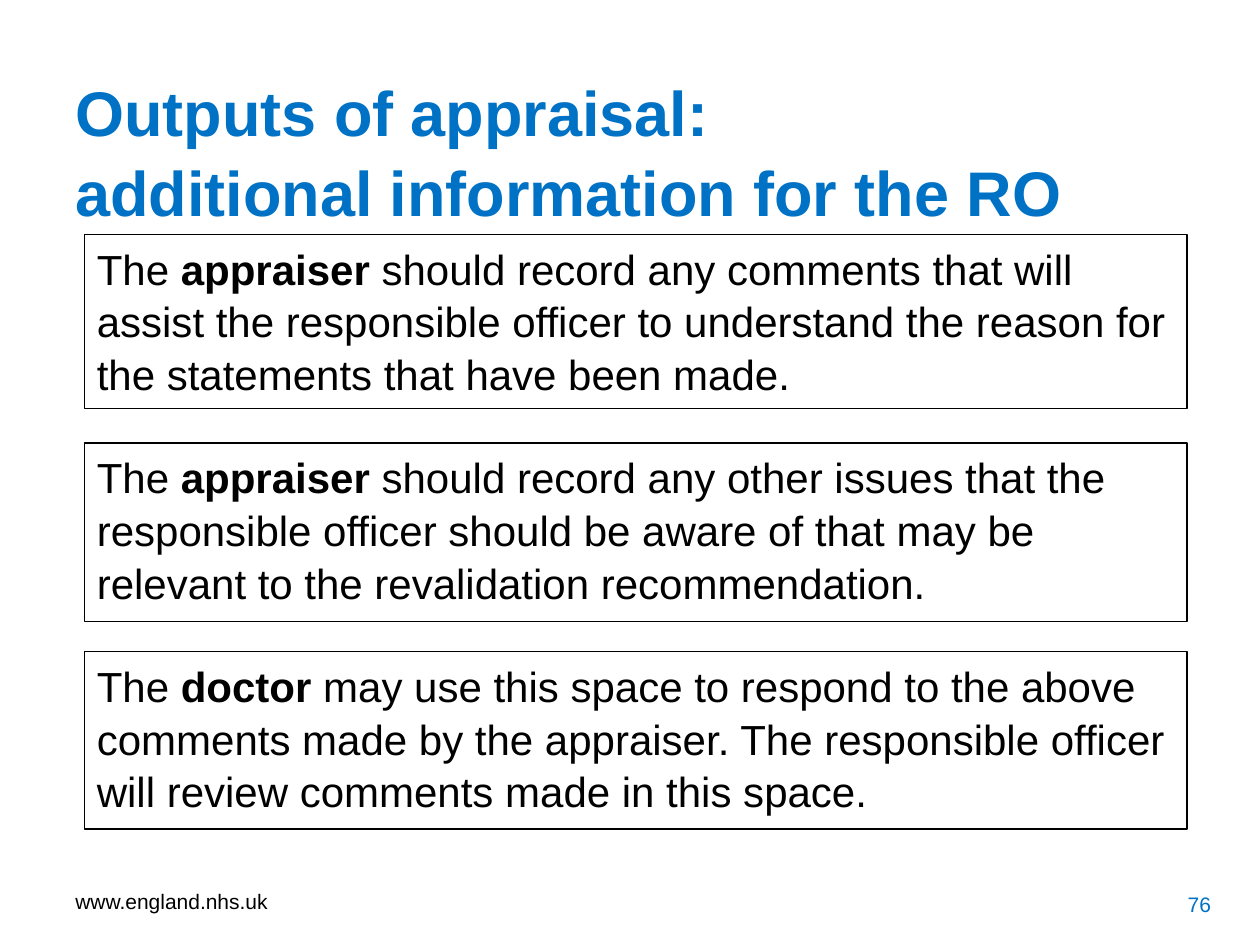
import pptx
import pptx.util
import pptx.dml.color
import pptx.enum.shapes
import pptx.enum.text

Inches, Pt = pptx.util.Inches, pptx.util.Pt
RGB = pptx.dml.color.RGBColor.from_string
ALIGN = pptx.enum.text.PP_ALIGN
ANCHOR = pptx.enum.text.MSO_ANCHOR


class Theme:
    font = "Arial"
    blue = RGB("0072C6")
    black = RGB("000000")
    head, body, small = Pt(36), Pt(24), Pt(12)
    lead = 1.05
    rule = Pt(0.75)


# Grid of stacked boxes, in inches
LEFT, WIDE = 0.67, 8.75
TOP, STEP = 1.86, 1.655
BOXES = [
    (1.38, [[("The ", False), ("appraiser", True),
             (" should record any comments that will assist the responsible "
              "officer to understand the reason for the statements that have "
              "been made.", False)]]),
    (1.42, [[("The ", False), ("appraiser", True),
             (" should record any other issues that the responsible officer "
              "should be aware of that may be relevant to the revalidation "
              "recommendation.", False)]]),
    (1.41, [[("The ", False), ("doctor", True),
             (" may use this space to respond to the above comments made by "
              "the appraiser. The responsible officer", False)],
            [("will review comments made in this space.", False)]]),
]


def apply(item, look):
    for key, value in look.items():
        setattr(item, key, value)


def write(shape, paras, size, color, anchor, align=ALIGN.LEFT):
    """Fill a shape with paragraphs of (text, bold) runs."""
    frame = shape.text_frame
    apply(frame, {"word_wrap": True, "vertical_anchor": anchor})
    for i, runs in enumerate(paras):
        para = frame.paragraphs[0] if i == 0 else frame.add_paragraph()
        apply(para, {"alignment": align, "line_spacing": Theme.lead})
        for text, bold in runs:
            if text == "\n":
                para.add_line_break()
                continue
            run = para.add_run()
            run.text = text
            apply(run.font, {"name": Theme.font, "size": size, "bold": bold})
            run.font.color.rgb = color


def label(slide, area, runs, size, color, align=ALIGN.LEFT):
    box = slide.shapes.add_textbox(*map(Inches, area))
    write(box, [runs], size, color, ANCHOR.MIDDLE, align)


def panel(slide, area, paras):
    box = slide.shapes.add_shape(
        pptx.enum.shapes.MSO_SHAPE.RECTANGLE, *map(Inches, area))
    box.shadow.inherit = False
    box.fill.background()
    box.line.color.rgb = Theme.black
    box.line.width = Theme.rule
    write(box, paras, Theme.body, Theme.black, ANCHOR.TOP)


def main():
    deck = pptx.Presentation()
    apply(deck, {"slide_width": Inches(10), "slide_height": Inches(7.5)})
    slide = deck.slides.add_slide(deck.slide_layouts[6])

    # Title
    title = [("Outputs of appraisal:", True), ("\n", True),
             ("additional information for the RO", True)]
    label(slide, (0.5, 0.82, 8.05, 0.73), title, Theme.head, Theme.blue)

    # Guidance boxes
    for row, (high, paras) in enumerate(BOXES):
        panel(slide, (LEFT, TOP + row * STEP, WIDE, high), paras)

    # Footer and page number
    label(slide, (0.5, 6.95, 2.33, 0.4), [("www.england.nhs.uk", False)],
          Theme.small, Theme.black)
    label(slide, (7.38, 6.97, 2.33, 0.4), [("76", False)],
          Theme.small, Theme.blue, ALIGN.RIGHT)

    deck.save("out.pptx")


if __name__ == "__main__":
    main()
